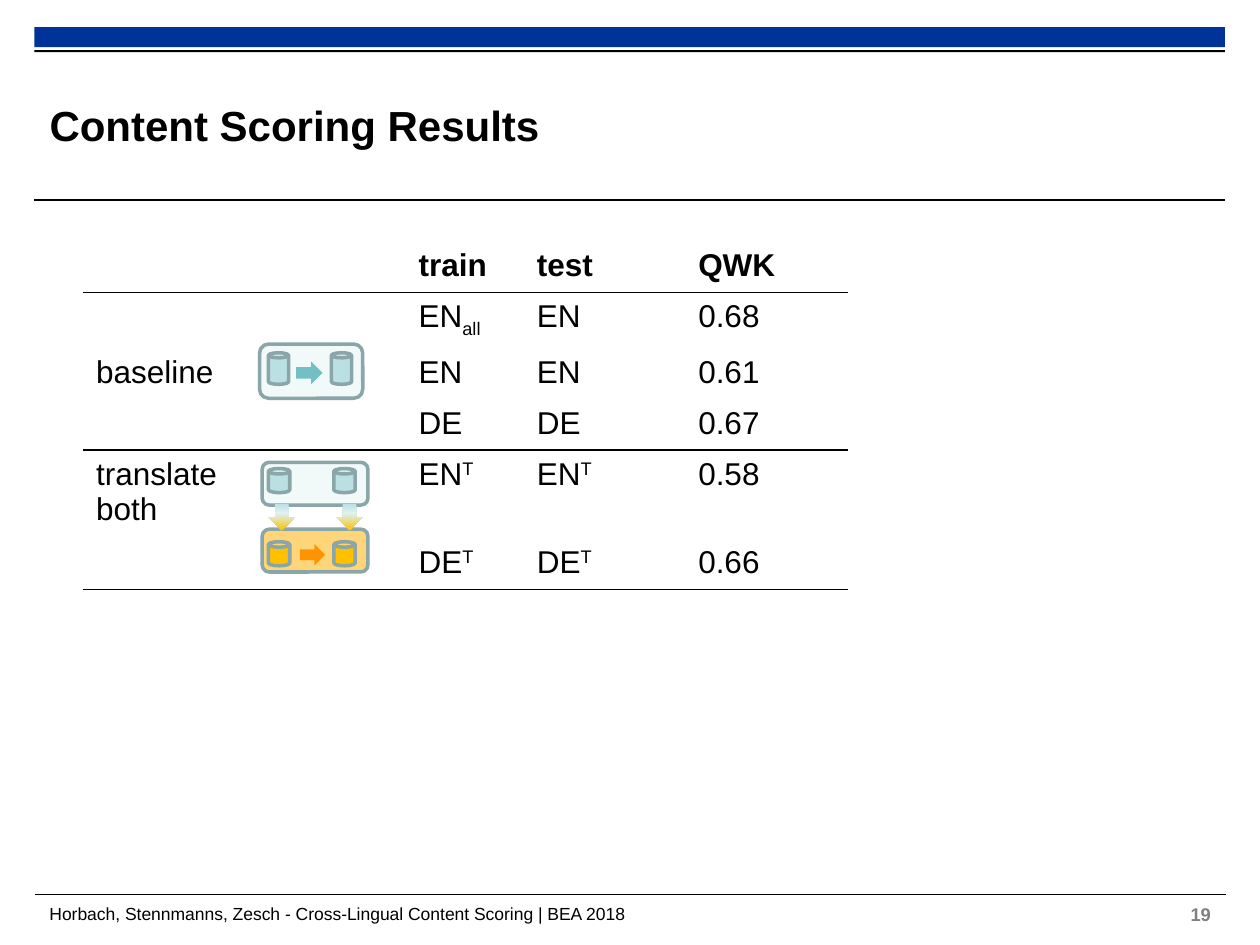
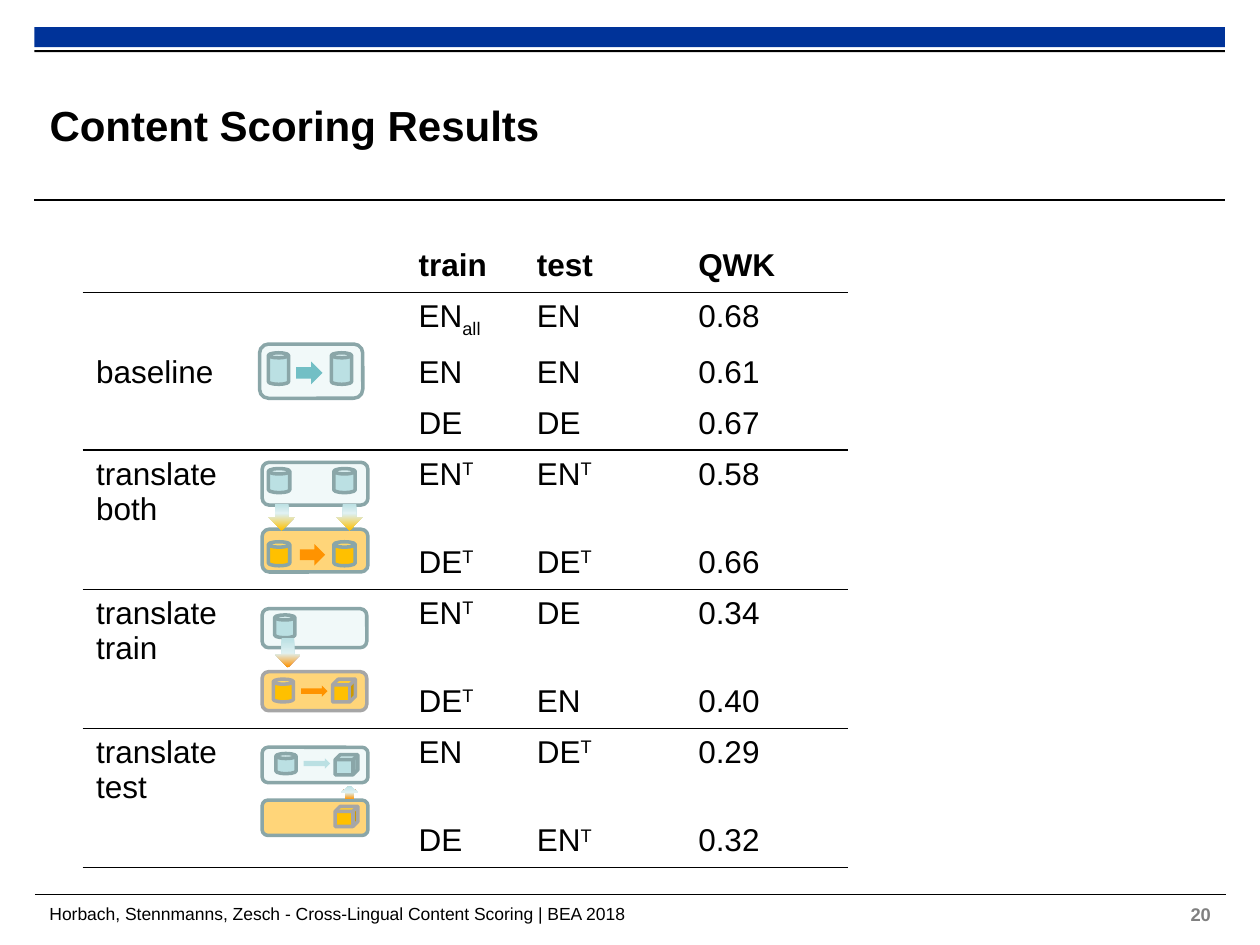
import pptx
import pptx.util
import pptx.dml.color
import pptx.enum.shapes
import pptx.enum.text
import pptx.oxml
import pptx.oxml.ns
from lxml import etree

Pt = pptx.util.Pt
RGBColor = pptx.dml.color.RGBColor
SHAPE = pptx.enum.shapes.MSO_SHAPE
qn = pptx.oxml.ns.qn

# Colours
BLUE = RGBColor(0x00, 0x33, 0x99)
BLACK = RGBColor(0x00, 0x00, 0x00)
WHITE = RGBColor(0xFF, 0xFF, 0xFF)
GREY = RGBColor(0x80, 0x80, 0x80)
PALE = RGBColor(0xF1, 0xF9, 0xF9)
AQUA = RGBColor(0xBB, 0xE0, 0xE3)
TEAL = RGBColor(0x72, 0xBF, 0xC5)
SAND = RGBColor(0xFF, 0xD5, 0x79)
GOLD = RGBColor(0xFF, 0xC0, 0x00)
ORANGE = RGBColor(0xFF, 0x93, 0x00)
SLATE = RGBColor(0x8A, 0xA6, 0xA8)
SILVER = RGBColor(0xA6, 0xA6, 0xA6)
MIST = RGBColor(0xE0, 0xF1, 0xF2)
HAZE = RGBColor(0xDD, 0xF0, 0xF1)

# Gradients of the translation arrows: (position in percent, colour)
TO_GOLD = [(0, AQUA), (34, MIST), (37, HAZE), (100, GOLD)]
TO_ORANGE = [(0, AQUA), (50, HAZE), (51, MIST), (100, ORANGE)]
TO_AQUA = [(0, ORANGE), (50, HAZE), (51, MIST), (100, AQUA)]

# Icons: shape, left, top, width, height, fill, outline, rotation
CARD, CAN, CUBE, ARROW = (SHAPE.ROUNDED_RECTANGLE, SHAPE.CAN, SHAPE.CUBE,
                          SHAPE.RIGHT_ARROW)
baseline_icon = [
    (CARD, 148.3, 196.6, 59, 31, PALE, SLATE, 0),
    (CAN, 153.4, 201.6, 11.5, 18, AQUA, SLATE, 0),
    (CAN, 189.4, 201.6, 11.5, 18, AQUA, SLATE, 0),
    (ARROW, 169.2, 206.6, 15.1, 13, TEAL, None, 0),
]
both_icon = [
    (CARD, 149.8, 264.2, 60.5, 24.5, PALE, SLATE, 0),
    (CARD, 149.8, 302.4, 60.5, 24.5, SAND, SLATE, 0),
    (ARROW, 171.4, 311, 14.4, 12.2, ORANGE, None, 0),
]
for can_left, arrow_left in [(153.4, 153.4), (190.8, 192.2)]:
    both_icon += [
        (CAN, can_left, 267.8, 12.2, 13.7, AQUA, SLATE, 0),
        (CAN, can_left, 309.6, 12.2, 13.7, GOLD, SLATE, 0),
        (ARROW, arrow_left, 288, 15.1, 15.1, TO_GOLD, None, 90),
    ]
train_icon = [
    (CARD, 149.8, 347.8, 59.8, 22.3, PALE, SLATE, 0),
    (CARD, 149.8, 383.8, 59.8, 22.3, SAND, SILVER, 0),
    (CAN, 157, 351.4, 11.5, 13, AQUA, SLATE, 0),
    (CAN, 156.2, 388.1, 11.5, 13, GOLD, SILVER, 0),
    (ARROW, 156.2, 365.8, 16.6, 14.4, TO_ORANGE, None, 90),
    (ARROW, 172.1, 391.7, 15.1, 6.5, ORANGE, None, 0),
    (CUBE, 190.1, 388.1, 13, 13, GOLD, SILVER, 0),
]
test_icon = [
    (CARD, 149.8, 427, 60.5, 20.2, PALE, SLATE, 0),
    (CARD, 149.8, 457.2, 60.5, 20.2, SAND, SLATE, 0),
    (CAN, 157.7, 430.6, 11.5, 11.5, AQUA, SLATE, 0),
    (ARROW, 195.8, 447.8, 7.9, 10.1, TO_AQUA, None, 270),
    (ARROW, 173.5, 433.4, 15.1, 5.8, AQUA, None, 0),
    (CUBE, 191.5, 431.3, 13, 11.5, AQUA, SLATE, 0),
    (CUBE, 191.5, 460.8, 13, 11.5, GOLD, SILVER, 0),
]

# Results: method, icon, rows of (train, test, QWK); ^ raises and _ lowers
METHODS = [
    ("baseline", baseline_icon,
     [("EN_all", "EN", "0.68"), ("EN", "EN", "0.61"), ("DE", "DE", "0.67")]),
    ("translate both", both_icon,
     [("EN^T", "EN^T", "0.58"), ("DE^T", "DE^T", "0.66")]),
    ("translate train", train_icon,
     [("EN^T", "DE", "0.34"), ("DE^T", "EN", "0.40")]),
    ("translate test", test_icon,
     [("EN", "DE^T", "0.29"), ("DE", "EN^T", "0.32")]),
]
BASELINE = {"^": "30000", "_": "-25000"}
COLUMN_WIDTHS = [116.64, 67.68, 67.68, 92.16, 92.16]
ROW_HEIGHT, SUBSCRIPT_ROW, TWO_LINE_ROW = 29.1, 30.3, 47.4


def write(frame, text, size=18, bold=False, color=BLACK):
    """Write text in Arial, with a part after ^ or _ raised or lowered."""
    mark = next((m for m in BASELINE if m in text), None)
    for index, part in enumerate(text.split(mark) if mark else [text]):
        run = frame.paragraphs[0].add_run()
        run.text = part
        run.font.name = "Arial"
        run.font.size = Pt(size)
        run.font.bold = bold
        run.font.color.rgb = color
        if index:
            run.font._element.set("baseline", BASELINE[mark])


def draw(shapes, kind, left, top, width, height, fill, outline=None, turn=0):
    """Draw a preset shape with a plain or a gradient fill."""
    shape = shapes.add_shape(kind, Pt(left), Pt(top), Pt(width), Pt(height))
    shape.shadow.inherit = False
    shape.rotation = turn
    if isinstance(fill, list):
        shape.fill.gradient()
        shape.fill.gradient_angle = 0
        stops = next(shape.element.iter(qn("a:gsLst")))
        for old_stop in list(stops):
            stops.remove(old_stop)
        for position, color in fill:
            stop = etree.SubElement(stops, qn("a:gs"), pos=str(position * 1000))
            etree.SubElement(stop, qn("a:srgbClr"), val=str(color))
    else:
        shape.fill.solid()
        shape.fill.fore_color.rgb = fill
    if outline is None:
        shape.line.fill.background()
    else:
        shape.line.color.rgb = outline
        shape.line.width = Pt(2)
    return shape


prs = pptx.Presentation()
prs.slide_width, prs.slide_height = Pt(720), Pt(540)
layout = prs.slide_layouts[5]

for page, methods in [(19, METHODS[:2]), (20, METHODS)]:
    slide = prs.slides.add_slide(layout)

    # Bands and rules, kept on the layout for both slides
    if page == 19:
        decoration = [
            draw(slide.shapes, SHAPE.RECTANGLE, 19.6, 15.6, 680.4, 11.4, BLUE),
            draw(slide.shapes, SHAPE.RECTANGLE, 19.6, 28.6, 680.4, 1.2, BLACK),
        ]
        for left, top in [(19.6, 114.3), (20, 511)]:
            rule = slide.shapes.add_connector(
                pptx.enum.shapes.MSO_CONNECTOR.STRAIGHT,
                Pt(left), Pt(top), Pt(left + 680.4), Pt(top))
            rule.line.color.rgb = BLACK
            rule.line.width = Pt(0.6)
            etree.SubElement(rule.element.spPr, qn("a:effectLst"))
            decoration.append(rule)
        for part in decoration:
            layout.shapes.element.append(part.element)

    # Title
    title = slide.shapes.title
    title.left, title.top, title.width, title.height = (
        Pt(28.3), Pt(38.2), Pt(512), Pt(66.2))
    heading = title.text_frame
    heading.vertical_anchor = pptx.enum.text.MSO_ANCHOR.MIDDLE
    heading.paragraphs[0].alignment = pptx.enum.text.PP_ALIGN.LEFT
    write(heading, "Content Scoring Results", size=24, bold=True)

    # Footer and page number
    footer = slide.shapes.add_textbox(
        Pt(28.3), Pt(516.2), Pt(626.4), Pt(18)).text_frame
    footer.word_wrap = True
    write(footer, "Horbach, Stennmanns, Zesch - Cross-Lingual Content Scoring"
                  " | BEA 2018", size=10)
    for frame in (heading, footer):
        frame.margin_left = frame.margin_right = 0
        frame.margin_top = frame.margin_bottom = 0
    number = slide.shapes.add_textbox(
        Pt(673.2), Pt(512.6), Pt(36.7), Pt(20)).text_frame
    number.word_wrap = False
    write(number, str(page), size=10.5, bold=True, color=GREY)

    # Table rows: the baseline label stands in the middle row of its block
    rows = [("", "", "train", "test", "QWK")]
    heights = [ROW_HEIGHT]
    ruled = {0}
    for method, icon, scores in methods:
        label_row = (len(scores) - 1) // 2
        for index, score in enumerate(scores):
            label = method if index == label_row else ""
            rows.append((label, "") + score)
            heights.append(TWO_LINE_ROW if " " in label else
                           SUBSCRIPT_ROW if "_" in score[0] else ROW_HEIGHT)
        ruled.add(len(rows) - 1)

    # Results table
    results = slide.shapes.add_table(
        len(rows), len(COLUMN_WIDTHS), Pt(47.7), Pt(138.2),
        Pt(sum(COLUMN_WIDTHS)), Pt(sum(heights))).table
    results.first_row = results.horz_banding = False
    for column, width in zip(results.columns, COLUMN_WIDTHS):
        column.width = Pt(width)
    for r, row in enumerate(rows):
        results.rows[r].height = Pt(heights[r])
        edges = {"a:lnL": WHITE, "a:lnR": WHITE,
                 "a:lnT": BLACK if r - 1 in ruled else WHITE,
                 "a:lnB": BLACK if r in ruled else WHITE}
        for c, text in enumerate(row):
            cell = results.cell(r, c)
            cell.fill.solid()
            cell.fill.fore_color.rgb = WHITE
            if text:
                write(cell.text_frame, text, bold=r == 0)
            properties = cell._tc.get_or_add_tcPr()
            for place, (edge, color) in enumerate(edges.items()):
                border = etree.Element(qn(edge), w=str(Pt(1)))
                paint = etree.SubElement(border, qn("a:solidFill"))
                etree.SubElement(paint, qn("a:srgbClr"), val=str(color))
                properties.insert(place, border)

    # Method icons
    for method, icon, scores in reversed(methods):
        group = slide.shapes.add_group_shape()
        for part in icon:
            draw(group.shapes, *part)

prs.save("out.pptx")
